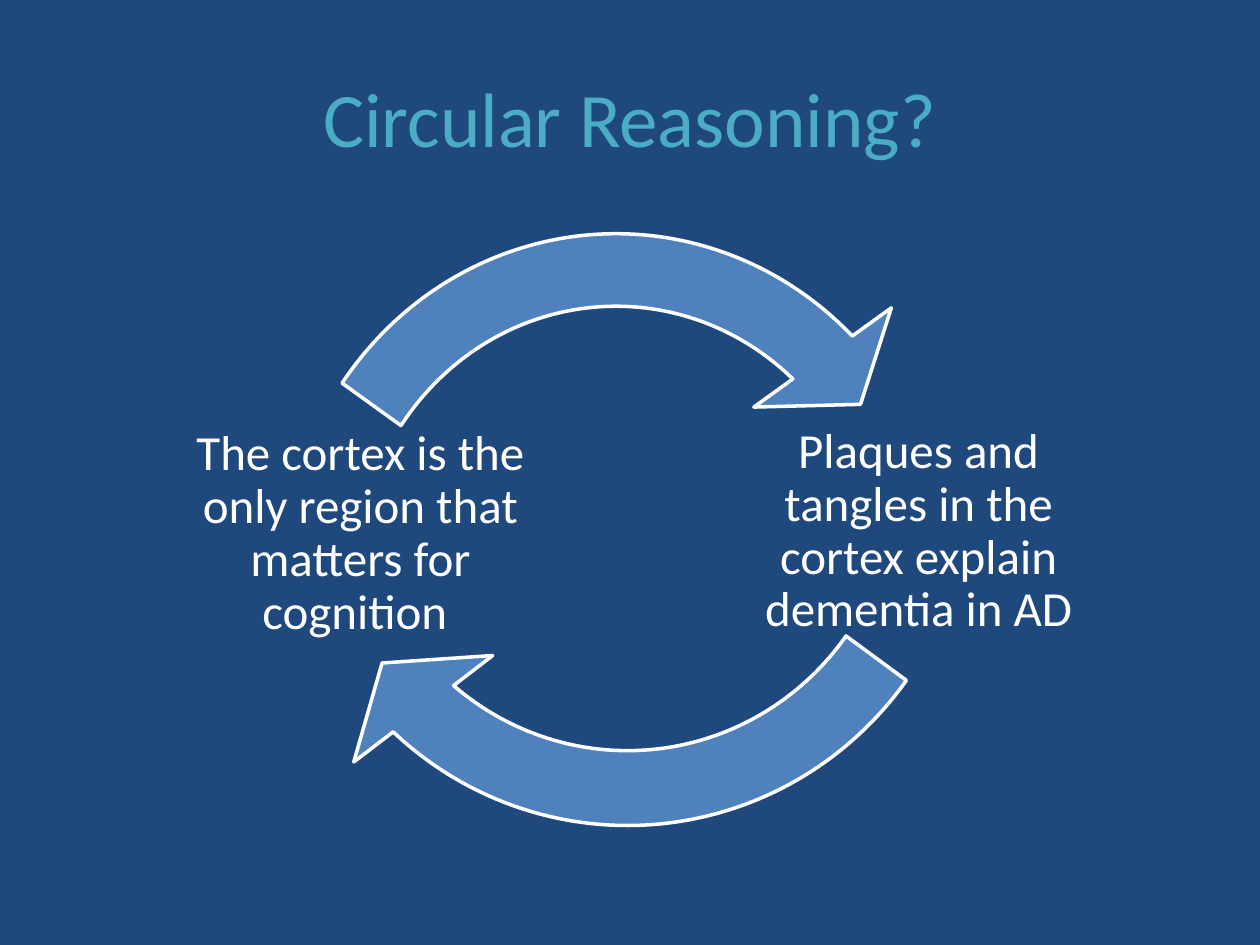
"""Build the "Circular Reasoning?" slide: two claims joined by two curved arrows."""
from pptx import Presentation
from pptx.dml.color import RGBColor
from pptx.enum.shapes import MSO_SHAPE
from pptx.enum.text import MSO_ANCHOR, PP_ALIGN
from pptx.util import Inches, Pt

ARROW = MSO_SHAPE.CIRCULAR_ARROW
MIDDLE = MSO_ANCHOR.MIDDLE
CENTER = PP_ALIGN.CENTER

THEME = {
    "font": "Calibri",
    "background": RGBColor(0x1F, 0x49, 0x7D),
    "title": RGBColor(0x4B, 0xAC, 0xC6),
    "text": RGBColor(0xFF, 0xFF, 0xFF),
    "arrow": RGBColor(0x4F, 0x81, 0xBD),
    "title_size": Pt(44),
    "claim_size": Pt(28),
    "outline": Pt(2),
}
WIDTH, HEIGHT = 10, 7.5
CLAIM_TOP = 3.07
INSET = Inches(0.04)
BAND, HEAD_ANGLE, HEAD_WIDTH = 0.095, 6.849, 0.111

prs = Presentation()
prs.slide_width, prs.slide_height = Inches(WIDTH), Inches(HEIGHT)
s = prs.slides.add_slide(prs.slide_layouts[6])
s.background.fill.solid()
s.background.fill.fore_color.rgb = THEME["background"]


def add_text(text, box, size, color, spacing):
    sp = s.shapes.add_textbox(*map(Inches, box))
    tf = sp.text_frame
    tf.word_wrap = True
    tf.vertical_anchor = MIDDLE
    tf.margin_left = tf.margin_right = tf.margin_top = tf.margin_bottom = INSET
    p = tf.paragraphs[0]
    p.text = text
    p.alignment = CENTER
    p.line_spacing = spacing
    p.font.name = THEME["font"]
    p.font.size = size
    p.font.color.rgb = color


claims = [
    ("The cortex is the only region that matters for cognition ", (1.43, CLAIM_TOP, 2.86, 2.34)),
    ("Plaques and tangles in the cortex explain dementia in AD", (5.75, CLAIM_TOP, 3.08, 2.3)),
]
arrows = [
    ((1.86, 1.47, 6.06, 6.28), 187.656, 129.495),
    ((1.85, 0.59, 6.26, 6.36), 78.671, 21.818),
]

for (text, claim_box), (arrow_box, end, start) in zip(claims, arrows):
    add_text(text, claim_box, THEME["claim_size"], THEME["text"], 0.9)
    sp = s.shapes.add_shape(ARROW, *map(Inches, arrow_box))
    for i, value in enumerate((BAND, HEAD_ANGLE, end, start, HEAD_WIDTH)):
        sp.adjustments[i] = value
    sp.shadow.inherit = False
    sp.fill.solid()
    sp.fill.fore_color.rgb = THEME["arrow"]
    sp.line.color.rgb = THEME["text"]
    sp.line.width = THEME["outline"]

title_box = (WIDTH * 0.05, HEIGHT * 0.04, WIDTH * 0.9, HEIGHT / 6)
add_text("Circular Reasoning?", title_box, THEME["title_size"], THEME["title"], 1.0)

prs.save("out.pptx")
